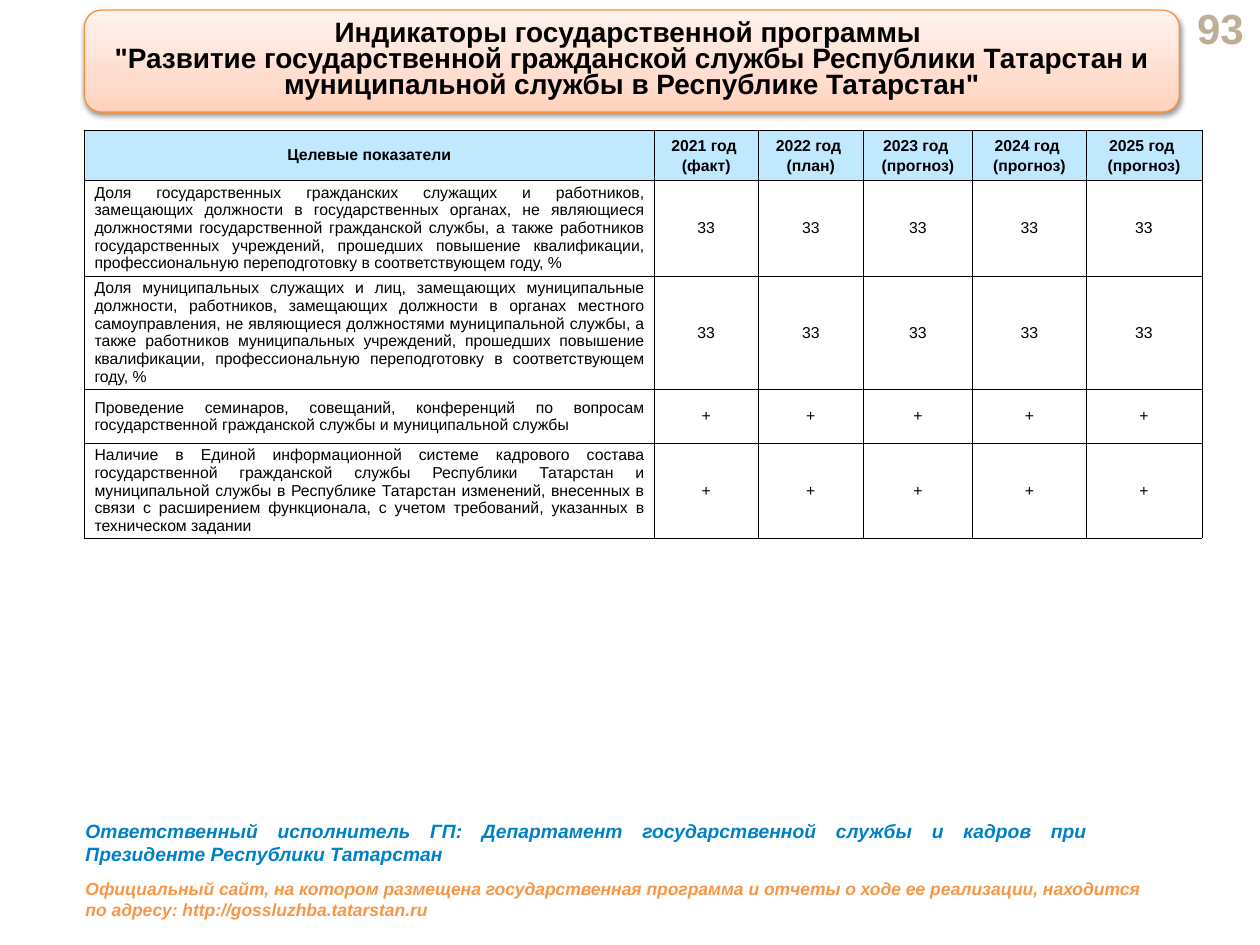
from copy import deepcopy

from lxml import etree
from pptx import Presentation
from pptx.dml.color import RGBColor
from pptx.enum.shapes import MSO_SHAPE
from pptx.enum.text import MSO_ANCHOR, MSO_AUTO_SIZE, PP_ALIGN
from pptx.oxml import parse_xml
from pptx.oxml.ns import nsdecls, qn
from pptx.util import Inches, Pt

ROUNDED = MSO_SHAPE.ROUNDED_RECTANGLE
MIDDLE, TOP = MSO_ANCHOR.MIDDLE, MSO_ANCHOR.TOP
NO_AUTOFIT = MSO_AUTO_SIZE.NONE
LEFT, CENTER, RIGHT, JUSTIFY = PP_ALIGN.LEFT, PP_ALIGN.CENTER, PP_ALIGN.RIGHT, PP_ALIGN.JUSTIFY

BLACK = RGBColor(0x00, 0x00, 0x00)
WHITE = RGBColor(0xFF, 0xFF, 0xFF)
BEIGE = RGBColor(0xBF, 0xAE, 0x96)
SKY = RGBColor(0xC0, 0xE9, 0xFF)
BLUE = RGBColor(0x00, 0x81, 0xC5)
ORANGE = RGBColor(0xF7, 0x96, 0x46)
BANNER_LINE = RGBColor(0xF6, 0x92, 0x40)
BANNER_STOPS = [
    (0, RGBColor(0xFF, 0xD2, 0xBD)),
    (0.35, RGBColor(0xFF, 0xDE, 0xD0)),
    (1, RGBColor(0xFF, 0xF2, 0xED)),
]

BANNER_BOX = (0.67, 0.08, 8.69, 0.81)
TITLE = (
    "Индикаторы государственной программы \n"
    "\"Развитие государственной гражданской службы Республики Татарстан и "
    "муниципальной службы в Республике Татарстан\""
)
YEARS = [
    ("2021 год ", "(факт)"),
    ("2022 год ", "(план)"),
    ("2023 год ", "(прогноз)"),
    ("2024 год ", "(прогноз)"),
    ("2025 год ", "(прогноз)"),
]
INDICATORS = [
    ("Доля государственных гражданских служащих и работников, замещающих должности в "
     "государственных органах, не являющиеся должностями государственной гражданской службы, "
     "а также работников государственных учреждений, прошедших повышение квалификации, "
     "профессиональную переподготовку в соответствующем году, %", "33"),
    ("Доля муниципальных служащих и лиц, замещающих муниципальные должности, работников, "
     "замещающих должности в органах местного самоуправления, не являющиеся должностями "
     "муниципальной службы, а также работников муниципальных учреждений, прошедших повышение "
     "квалификации, профессиональную переподготовку в соответствующем году, %", "33"),
    ("Проведение семинаров, совещаний, конференций по вопросам государственной гражданской "
     "службы и муниципальной службы", "+"),
    ("Наличие в Единой информационной системе кадрового состава государственной гражданской "
     "службы Республики Татарстан и муниципальной службы в Республике Татарстан изменений, "
     "внесенных в связи с расширением функционала, с учетом требований, указанных в "
     "техническом задании", "+"),
]
COLUMN_WIDTHS = [4.52, 0.83, 0.83, 0.87, 0.9, 0.92]
ROW_HEIGHTS = [0.4, 0.76, 0.9, 0.43, 0.75]
EXECUTOR = (
    "Ответственный исполнитель ГП: Департамент государственной службы и кадров при "
    "Президенте Республики Татарстан"
)
WEBSITE = (
    "Официальный сайт, на котором размещена государственная программа и отчеты о ходе ее "
    "реализации, находится по адресу: http://gossluzhba.tatarstan.ru"
)


def write_text(frame, *lines, size=9, color=BLACK, bold=False, italic=False,
               align=CENTER, spacing=None):
    """Fill a text frame with one formatted paragraph per line."""
    for index, line in enumerate(lines):
        paragraph = frame.add_paragraph() if index else frame.paragraphs[0]
        paragraph.text = line
        paragraph.alignment = align
        if spacing:
            paragraph.line_spacing = spacing
        for run in paragraph.runs:
            font = run.font
            font.name, font.size = "Arial", Pt(size)
            font.bold, font.italic = bold, italic
            font.color.rgb = color


def add_note(slide, box, text, anchor=TOP, **style):
    """Add a wrapped text box."""
    frame = slide.shapes.add_textbox(*map(Inches, box)).text_frame
    frame.word_wrap = True
    frame.vertical_anchor = anchor
    write_text(frame, text, **style)


def add_banner(slide):
    """Add the gradient panel with a soft shadow."""
    banner = slide.shapes.add_shape(ROUNDED, *map(Inches, BANNER_BOX))
    banner.fill.gradient()
    banner.fill.gradient_angle = 90
    properties = banner._element.spPr
    stop_list = properties.find(".//" + qn("a:gsLst"))
    stop_list.append(deepcopy(stop_list[0]))
    for stop, (position, color) in zip(banner.fill.gradient_stops, BANNER_STOPS):
        stop.position = position
        stop.color.rgb = color
    banner.line.color.rgb = BANNER_LINE
    banner.line.width = Pt(0.75)
    banner.shadow.inherit = False
    properties.find(qn("a:effectLst")).append(parse_xml(
        f'<a:outerShdw {nsdecls("a")} blurRad="{Pt(3.1)}" dist="{Pt(1.6)}" dir="5400000" '
        'rotWithShape="0"><a:srgbClr val="000000"><a:alpha val="38000"/></a:srgbClr>'
        '</a:outerShdw>'))


def place_title(slide):
    """Move the title placeholder onto the banner and to the front."""
    title = slide.shapes.title
    title.left, title.top, title.width, title.height = map(Inches, BANNER_BOX)
    slide.shapes._spTree.append(title._element)
    frame = title.text_frame
    frame.word_wrap = True
    frame.auto_size = NO_AUTOFIT
    frame.vertical_anchor = MIDDLE
    write_text(frame, TITLE, size=16, bold=True, spacing=Pt(15))


def border_cell(cell):
    """Draw thin black borders around a cell."""
    properties = cell._tc.get_or_add_tcPr()
    for index, side in enumerate(("lnL", "lnR", "lnT", "lnB")):
        border = etree.Element(qn(f"a:{side}"), w=str(Pt(0.25)))
        fill = etree.SubElement(border, qn("a:solidFill"))
        etree.SubElement(fill, qn("a:srgbClr"), val=str(BLACK))
        properties.insert(index, border)


def fill_cell(cell, *lines, fill=WHITE, side_margin=0, **style):
    """Write and format one table cell."""
    cell.margin_left = cell.margin_right = Inches(side_margin)
    cell.margin_top = cell.margin_bottom = 0
    cell.vertical_anchor = MIDDLE
    cell.fill.solid()
    cell.fill.fore_color.rgb = fill
    border_cell(cell)
    write_text(cell.text_frame, *lines, **style)


def add_indicator_table(slide):
    """Add the table of target indicators by year."""
    table = slide.shapes.add_table(
        len(ROW_HEIGHTS), len(COLUMN_WIDTHS), Inches(0.67), Inches(1.03),
        Inches(sum(COLUMN_WIDTHS)), Inches(sum(ROW_HEIGHTS))).table
    table.horz_banding = False
    for column, width in zip(table.columns, COLUMN_WIDTHS):
        column.width = Inches(width)
    for row, height in zip(table.rows, ROW_HEIGHTS):
        row.height = Inches(height)
    fill_cell(table.cell(0, 0), "Целевые показатели", fill=SKY, bold=True)
    for column, year in enumerate(YEARS, 1):
        fill_cell(table.cell(0, column), *year, fill=SKY, side_margin=0.07,
                  bold=True, spacing=1.15)
    for row, (indicator, value) in enumerate(INDICATORS, 1):
        fill_cell(table.cell(row, 0), indicator, side_margin=0.08, align=JUSTIFY)
        for column in range(1, len(COLUMN_WIDTHS)):
            fill_cell(table.cell(row, column), value)


def main():
    """Build and save the slide."""
    deck = Presentation()
    deck.slide_width, deck.slide_height = Inches(10), Inches(7.5)
    slide = deck.slides.add_slide(deck.slide_layouts[5])
    add_note(slide, (9.11, 0.05, 0.86, 0.34), "93", anchor=MIDDLE, size=24,
             color=BEIGE, bold=True, align=RIGHT)
    add_banner(slide)
    place_title(slide)
    add_indicator_table(slide)
    add_note(slide, (0.58, 6.45, 8.15, 0.47), EXECUTOR, size=11, color=BLUE,
             bold=True, italic=True, align=JUSTIFY)
    add_note(slide, (0.58, 6.92, 8.59, 0.43), WEBSITE, size=10, color=ORANGE,
             bold=True, italic=True, align=LEFT)
    deck.save("out.pptx")


if __name__ == "__main__":
    main()
